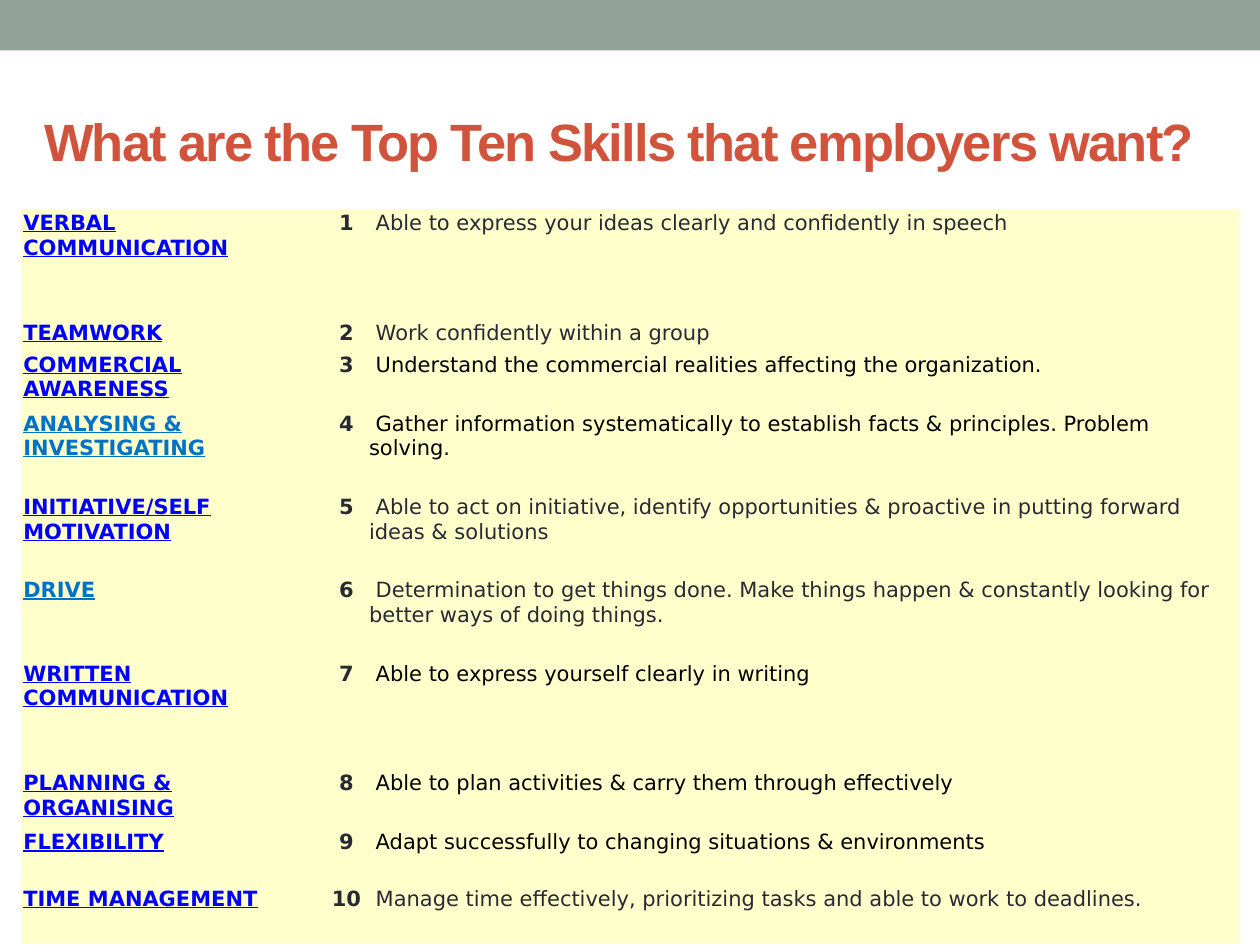
"""Build the slide on the top ten skills that employers want."""
from pptx import Presentation
from pptx.dml.color import RGBColor
from pptx.enum.shapes import MSO_SHAPE
from pptx.enum.text import MSO_ANCHOR, PP_ALIGN
from pptx.util import Cm, Pt

TITLE = "What are the Top Ten Skills that employers want?"
BLUE, AZURE, DARK, BLACK = "0000FF", "0072C8", "292934", "000000"
BAND, RED, CREAM = "93A299", "D2533C", "FFFFCC"
NO_GRID_STYLE = "{2D5ABB26-0587-4C30-8999-92F81FD0307C}"
COLUMN_WIDTHS = [6.14, 0.83, 17.58]
SKILLS = [
    ("VERBAL COMMUNICATION", BLUE,
     "Able to express your ideas clearly and confidently in speech", DARK, 2.21),
    ("TEAMWORK", BLUE, "Work confidently within a group", DARK, 0.64),
    ("COMMERCIAL AWARENESS", BLUE,
     "Understand the commercial realities affecting the organization.", BLACK, 1.19),
    ("ANALYSING & INVESTIGATING", AZURE,
     "Gather information systematically to establish facts & principles. "
     "Problem solving.", BLACK, 1.68),
    ("INITIATIVE/SELF MOTIVATION", BLUE,
     "Able to act on initiative, identify opportunities & proactive in "
     "putting forward ideas & solutions", DARK, 1.68),
    ("DRIVE", AZURE,
     "Determination to get things done. Make things happen & constantly "
     "looking for better ways of doing things.", DARK, 1.68),
    ("WRITTEN COMMUNICATION", BLUE,
     "Able to express yourself clearly in writing", BLACK, 2.21),
    ("PLANNING & ORGANISING", BLUE,
     "Able to plan activities & carry them through effectively", BLACK, 1.19),
    ("FLEXIBILITY", BLUE,
     "Adapt successfully to changing situations & environments", BLACK, 1.14),
    ("TIME MANAGEMENT", BLUE,
     "Manage time effectively, prioritizing tasks and able to work to deadlines.",
     DARK, 1.19),
]


def color(value):
    return RGBColor.from_string(value)


def write(frame, text, font="DejaVu Sans", size=12, ink=DARK, bold=False,
          underline=False, align=PP_ALIGN.LEFT, spacing=None):
    para = frame.paragraphs[0]
    para.alignment = align
    span = para.add_run()
    span.text = text
    span.font.name = font
    span.font.size = Pt(size)
    span.font.bold = bold
    span.font.underline = underline
    span.font.color.rgb = color(ink)
    if spacing is not None:
        span.font._element.set("spc", str(spacing))


def add_band(page, width):
    band = page.shapes.add_shape(MSO_SHAPE.RECTANGLE, 0, 0, width, Cm(1.02))
    band.shadow.inherit = False
    band.fill.solid()
    band.fill.fore_color.rgb = color(BAND)
    band.line.fill.background()


def add_title(page):
    box = page.shapes.add_textbox(Cm(0.64), Cm(1.47), Cm(24.13), Cm(2.74))
    box.text_frame.word_wrap = True
    box.text_frame.vertical_anchor = MSO_ANCHOR.MIDDLE
    write(box.text_frame, TITLE, font="Arial", size=30, ink=RED, bold=True, spacing=-100)


def add_skills(page):
    heights = [skill[-1] for skill in SKILLS]
    table = page.shapes.add_table(
        len(SKILLS), len(COLUMN_WIDTHS), Cm(0.43), Cm(4.22),
        Cm(sum(COLUMN_WIDTHS)), Cm(sum(heights))).table
    table.first_row = table.horz_banding = False
    table._tbl.tblPr[0].text = NO_GRID_STYLE
    for column, width in zip(table.columns, COLUMN_WIDTHS):
        column.width = Cm(width)
    for row, height in zip(table.rows, heights):
        row.height = Cm(height)
    for cell in table.iter_cells():
        cell.margin_left = cell.margin_right = Cm(0.04)
        cell.margin_top = cell.margin_bottom = Cm(0.04)
        cell.fill.solid()
        cell.fill.fore_color.rgb = color(CREAM)
    for number, (name, name_ink, detail, detail_ink, _) in enumerate(SKILLS, 1):
        name_cell, number_cell, detail_cell = table.rows[number - 1].cells
        write(name_cell.text_frame, name, ink=name_ink, bold=True, underline=True)
        write(number_cell.text_frame, str(number), bold=True, align=PP_ALIGN.CENTER)
        write(detail_cell.text_frame, f" {detail}", ink=detail_ink)


def main():
    deck = Presentation()
    deck.slide_width, deck.slide_height = Cm(25.4), Cm(19.05)
    page = deck.slides.add_slide(deck.slide_layouts[6])
    add_band(page, deck.slide_width)
    add_title(page)
    add_skills(page)
    deck.save("out.pptx")


if __name__ == "__main__":
    main()
